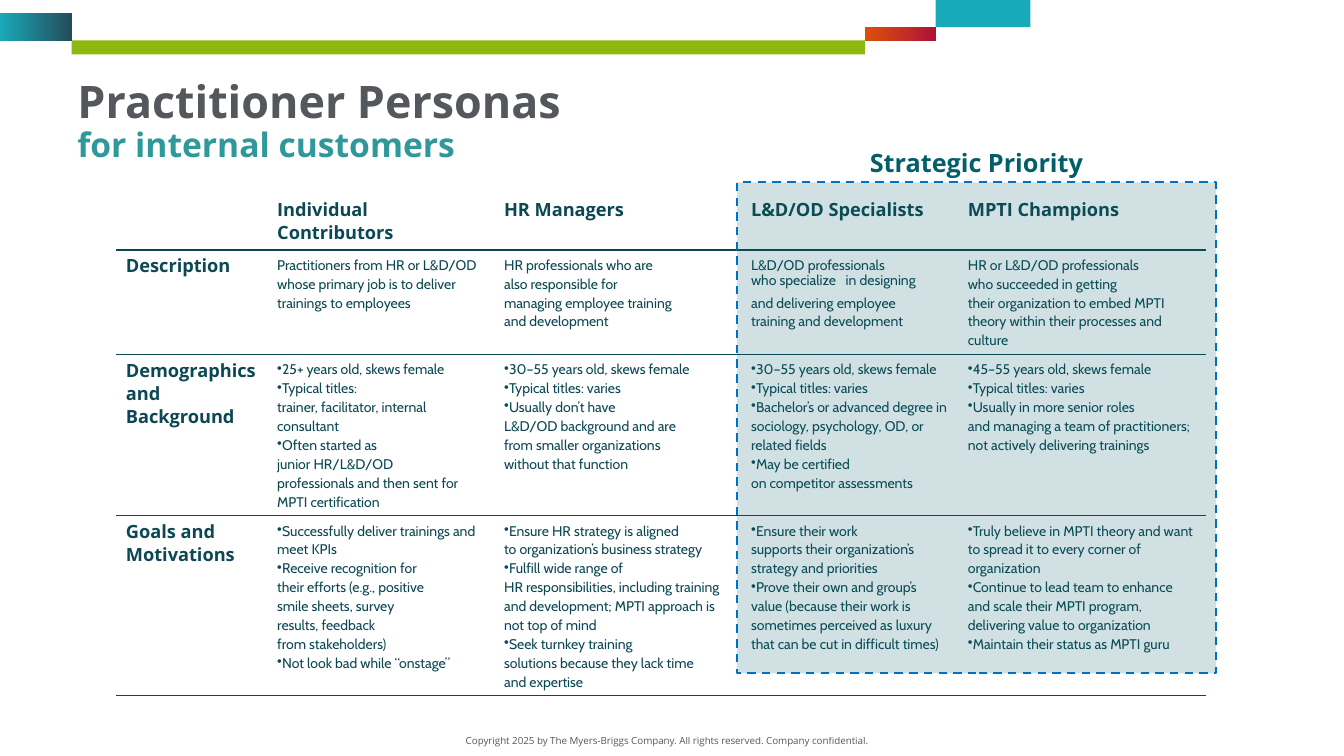
"""Build the practitioner personas slide."""
from dataclasses import dataclass
from typing import Optional

from lxml import etree
from pptx import Presentation
from pptx.dml.color import RGBColor
from pptx.enum import dml, shapes, text
from pptx.oxml import ns
from pptx.util import Inches, Pt


@dataclass(frozen=True)
class Theme:
    heading_font: str = "Open Sans"
    body_font: str = "Cabin"
    white: str = "FFFFFF"
    gray: str = "54575B"
    ink: str = "0C4853"
    teal: str = "2F989B"
    priority: str = "025E68"
    dash: str = "0070C0"
    green: str = "8CB80F"
    aqua: str = "19AABA"
    slate: str = "244C5A"
    orange: str = "DC500A"
    crimson: str = "AE1237"
    title_size: float = 32
    subtitle_size: float = 24
    label_size: float = 18
    heading_size: float = 13
    body_size: float = 10
    footer_size: float = 7
    heading_leading: float = 16.5
    body_leading: float = 13.5


@dataclass(frozen=True)
class Block:
    left: float
    top: float
    width: float
    height: float
    color: str
    end_color: Optional[str] = None


@dataclass(frozen=True)
class Rule:
    color: str
    weight: float


@dataclass(frozen=True)
class Persona:
    name: str
    description: str
    background: list[str]
    goals: list[str]


THEME = Theme()
HARD_SPACE = chr(160)
WIDE_GAP = "|"
BLOCKS = [
    Block(0.71, 0.4, 7.87, 0.14, THEME.green),
    Block(0, 0.13, 0.71, 0.28, THEME.aqua, THEME.slate),
    Block(9.28, 0, 0.94, 0.27, THEME.aqua),
    Block(8.58, 0.27, 0.7, 0.14, THEME.orange, THEME.crimson),
]
COLUMN_WIDTHS = [1.5, 2.25, 2.45, 2.15, 2.45]
ROW_HEIGHTS = [0.55, 1.03, 1.59, 1.78, 0.27]
THIN = Rule(THEME.ink, 0.75)
BLANK = Rule(THEME.white, 1)
ROW_RULES = [BLANK, Rule(THEME.ink, 2), THIN, THIN, THIN, BLANK]
ROW_LABELS = [["Description"], ["Demographics", "and", "Background"], ["Goals and", "Motivations"]]
PERSONAS = [
    Persona(
        "Individual Contributors",
        "Practitioners from HR or~L&D/OD whose primary job is to~deliver trainings to employees",
        ["25+ years old, skews female",
         "Typical titles: trainer,~facilitator,~internal consultant",
         "Often started as junior~HR/L&D/OD professionals~and then sent for MPTI~certification"],
        ["Successfully deliver trainings~and meet KPIs",
         "Receive recognition for their~efforts (e.g., positive smile~sheets,~survey results,"
         "~feedback from~stakeholders)",
         "Not look bad while “onstage”"],
    ),
    Persona(
        "HR Managers",
        "HR professionals who are also~responsible for managing~employee training and~development",
        ["30–55 years old, skews female",
         "Typical titles: varies",
         "Usually don’t have L&D/OD~background and are from~smaller organizations without~that function"],
        ["Ensure HR strategy is aligned to~organization’s business strategy",
         "Fulfill wide range of HR~responsibilities, including~training and development; MPTI"
         "~approach is not top of mind",
         "Seek turnkey training solutions~because they lack time and~expertise"],
    ),
    Persona(
        "L&D/OD Specialists",
        "L&D/OD professionals who~specialize |in designing and~delivering employee training"
        "~and~development",
        ["30–55 years old, skews~female",
         "Typical titles: varies",
         "Bachelor’s or advanced~degree in sociology,~psychology, OD, or related~fields",
         "May be certified on~competitor~assessments"],
        ["Ensure their work supports~their~organization’s strategy~and priorities",
         "Prove their own and~group’s value (because their~work is sometimes~perceived as luxury that can"
         "~be cut in difficult times)"],
    ),
    Persona(
        "MPTI Champions",
        "HR or L&D/OD professionals who~succeeded in getting their~organization to embed MPTI theory"
        "~within their processes and culture",
        ["45–55 years old, skews female",
         "Typical titles: varies",
         "Usually in more senior roles and~managing a team of~practitioners; not actively~delivering trainings"],
        ["Truly believe in MPTI theory and~want to spread it to every corner~of organization",
         "Continue to lead team to~enhance and scale their MPTI~program, delivering value to~organization",
         "Maintain their status as MPTI~guru"],
    ),
]


def add_text(paragraph, content: str, *, size: float, color: str,
             font: str = THEME.heading_font, bold: bool = False) -> None:
    """Append a formatted run, reading each tilde as a hard space."""
    run = paragraph.add_run()
    run.text = content.replace("~", HARD_SPACE)
    run.font.name, run.font.size, run.font.bold = font, Pt(size), bold
    run.font.color.rgb = RGBColor.from_string(color)


def add_box(slide, left: float, top: float, width: float, height: float):
    """Add a wrapping text box and return its text frame."""
    frame = slide.shapes.add_textbox(Inches(left), Inches(top), Inches(width), Inches(height)).text_frame
    frame.word_wrap = True
    return frame


def add_block(slide, block: Block):
    """Draw a borderless rectangle with a solid or gradient fill."""
    shape = slide.shapes.add_shape(shapes.MSO_SHAPE.RECTANGLE, Inches(block.left), Inches(block.top),
                                   Inches(block.width), Inches(block.height))
    shape.shadow.inherit = False
    shape.line.fill.background()
    if block.end_color:
        shape.fill.gradient()
        shape.fill.gradient_angle = 0
        for stop, color in zip(shape.fill.gradient_stops, (block.color, block.end_color)):
            stop.color.rgb = RGBColor.from_string(color)
    else:
        shape.fill.solid()
        shape.fill.fore_color.rgb = RGBColor.from_string(block.color)
    return shape


def set_borders(cell, top: Rule, bottom: Rule) -> None:
    """Give a cell its four border lines and no fill."""
    properties = cell._tc.get_or_add_tcPr()
    for side, rule in (("L", BLANK), ("R", BLANK), ("T", top), ("B", bottom)):
        line = etree.SubElement(properties, ns.qn(f"a:ln{side}"), w=str(Pt(rule.weight)))
        fill = etree.SubElement(line, ns.qn("a:solidFill"))
        etree.SubElement(fill, ns.qn("a:srgbClr"), val=rule.color)
    cell.fill.background()


def fill_cell(cell, lines: list[str], heading: bool = False, bulleted: bool = False) -> None:
    """Write one paragraph per line in the heading or body style."""
    cell.margin_left = cell.margin_right = Inches(0.09)
    for index, line in enumerate(lines):
        paragraph = cell.text_frame.add_paragraph() if index else cell.text_frame.paragraphs[0]
        if bulleted:
            properties = paragraph._p.get_or_add_pPr()
            properties.set("marL", "0")
            properties.set("indent", "0")
            etree.SubElement(properties, ns.qn("a:buChar"), char="•")
        paragraph.line_spacing = Pt(THEME.heading_leading if heading else THEME.body_leading)
        for part, content in enumerate(line.split(WIDE_GAP)):
            if part:
                add_text(paragraph, "~", size=THEME.label_size, color=THEME.gray)
            add_text(paragraph, content, color=THEME.ink, bold=heading,
                     size=THEME.heading_size if heading else THEME.body_size,
                     font=THEME.heading_font if heading else THEME.body_font)


def add_persona_table(slide) -> None:
    """Draw the table of personas."""
    table = slide.shapes.add_table(len(ROW_HEIGHTS), len(COLUMN_WIDTHS), Inches(1.16), Inches(1.92),
                                   Inches(sum(COLUMN_WIDTHS)), Inches(sum(ROW_HEIGHTS))).table
    table.first_row = table.horz_banding = False
    for column, width in zip(table.columns, COLUMN_WIDTHS):
        column.width = Inches(width)
    for index, height in enumerate(ROW_HEIGHTS):
        table.rows[index].height = Inches(height)
        for cell in table.rows[index].cells:
            set_borders(cell, ROW_RULES[index], ROW_RULES[index + 1])
    for row, label in enumerate(ROW_LABELS, 1):
        fill_cell(table.cell(row, 0), label, heading=True)
    for column, persona in enumerate(PERSONAS, 1):
        fill_cell(table.cell(0, column), [persona.name], heading=True)
        fill_cell(table.cell(1, column), [persona.description])
        fill_cell(table.cell(2, column), persona.background, bulleted=True)
        fill_cell(table.cell(3, column), persona.goals, bulleted=True)


def add_title(slide) -> None:
    """Write the two-line title."""
    frame = add_box(slide, 0.67, 0.72, 11.3, 0.99)
    frame.vertical_anchor = text.MSO_ANCHOR.MIDDLE
    paragraph = frame.paragraphs[0]
    paragraph.line_spacing = 0.9
    add_text(paragraph, "Practitioner Personas", size=THEME.title_size, color=THEME.gray, bold=True)
    paragraph.add_line_break()
    add_text(paragraph, "for internal customers", size=THEME.subtitle_size, color=THEME.teal, bold=True)


def add_priority(slide) -> None:
    """Highlight the strategic personas with a label and a dashed frame."""
    paragraph = add_box(slide, 7.31, 1.41, 4.75, 0.4).paragraphs[0]
    paragraph.alignment = text.PP_ALIGN.CENTER
    add_text(paragraph, "Strategic Priority", size=THEME.label_size, color=THEME.priority, bold=True)
    shape = add_block(slide, Block(7.31, 1.81, 4.75, 4.87, THEME.priority))
    color = shape._element.spPr.find(ns.qn("a:solidFill")).find(ns.qn("a:srgbClr"))
    etree.SubElement(color, ns.qn("a:alpha"), val="18000")
    shape.line.color.rgb = RGBColor.from_string(THEME.dash)
    shape.line.width = Pt(1.5)
    shape.line.dash_style = dml.MSO_LINE.DASH


def main() -> None:
    """Build and save the presentation."""
    presentation = Presentation()
    presentation.slide_width, presentation.slide_height = Inches(13.33), Inches(7.5)
    slide = presentation.slides.add_slide(presentation.slide_layouts[6])
    for block in BLOCKS:
        add_block(slide, block)
    footer = add_box(slide, 4.46, 7.24, 4.31, 0.22).paragraphs[0]
    footer.alignment = text.PP_ALIGN.CENTER
    add_text(footer, "Copyright 2025 by The Myers-Briggs Company. All rights reserved. Company confidential.",
             size=THEME.footer_size, color=THEME.gray)
    add_title(slide)
    add_persona_table(slide)
    add_priority(slide)
    presentation.save("out.pptx")


if __name__ == "__main__":
    main()
